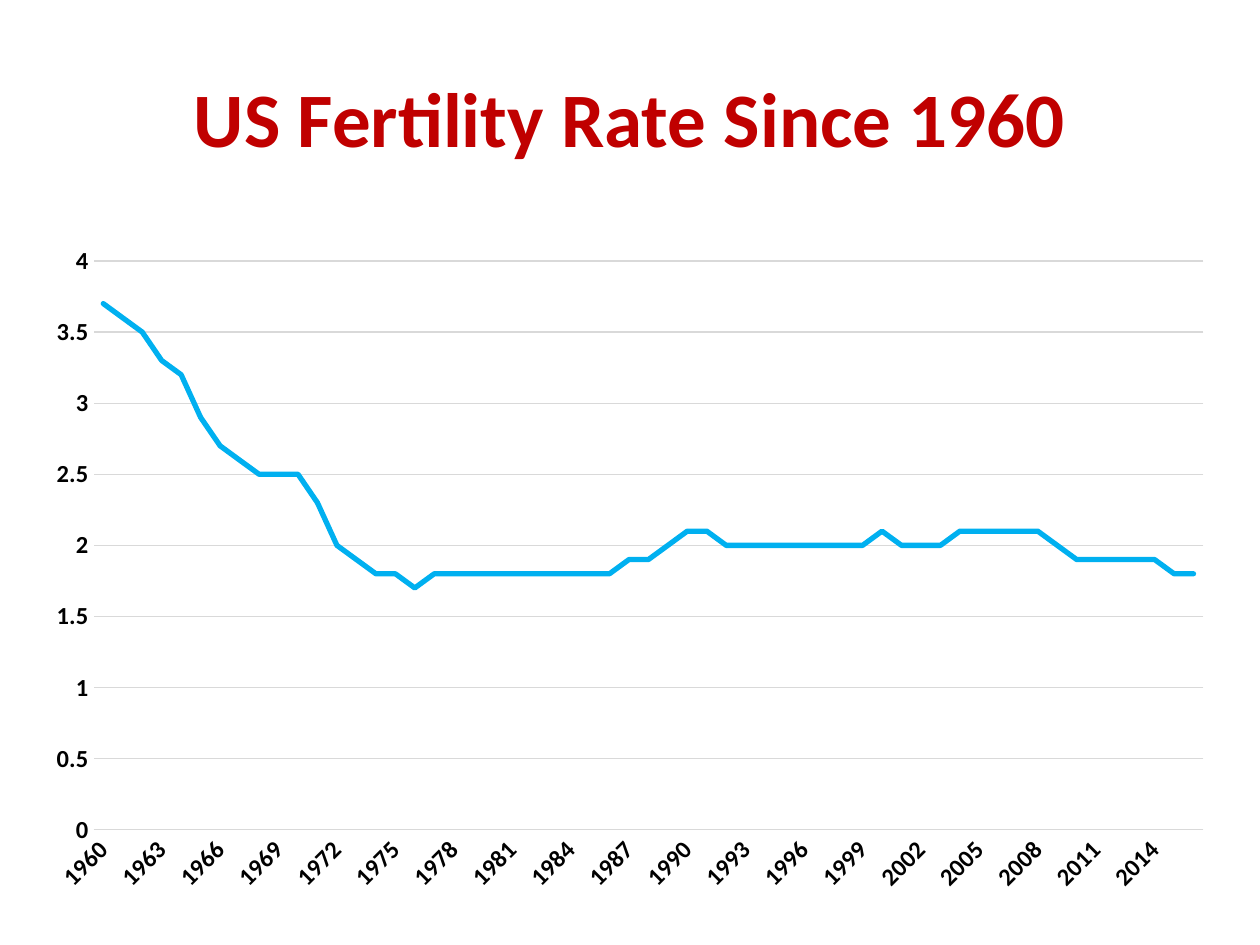
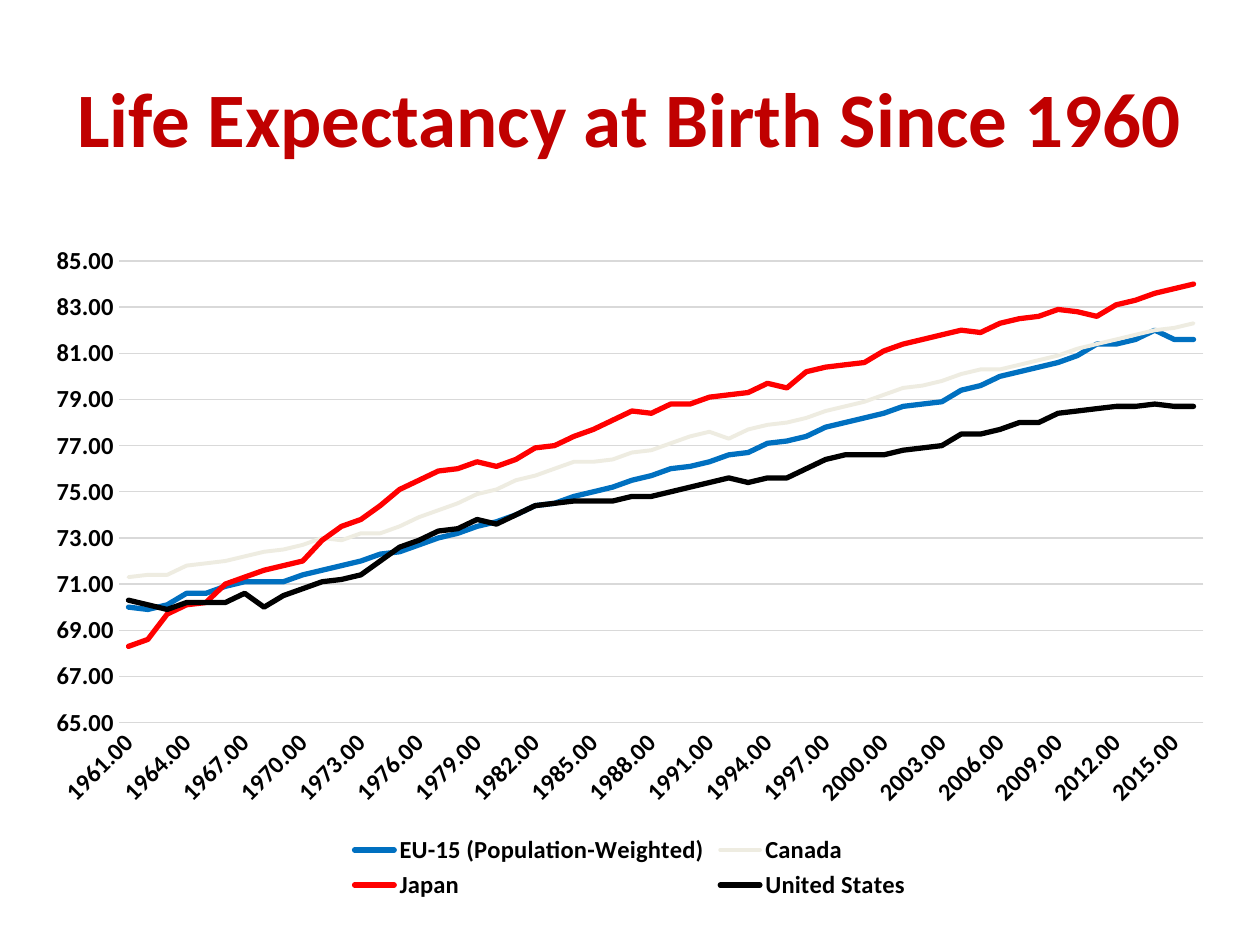
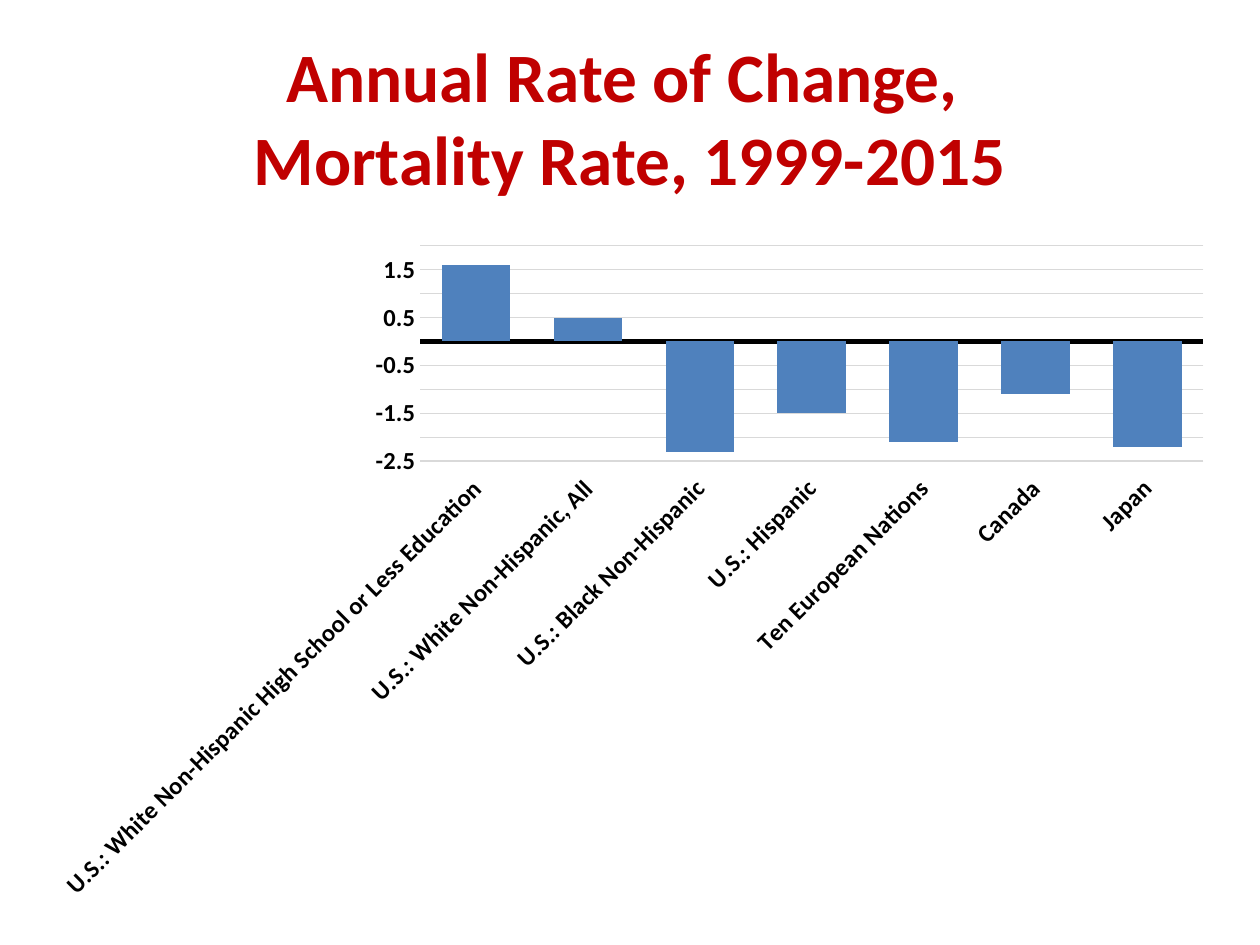
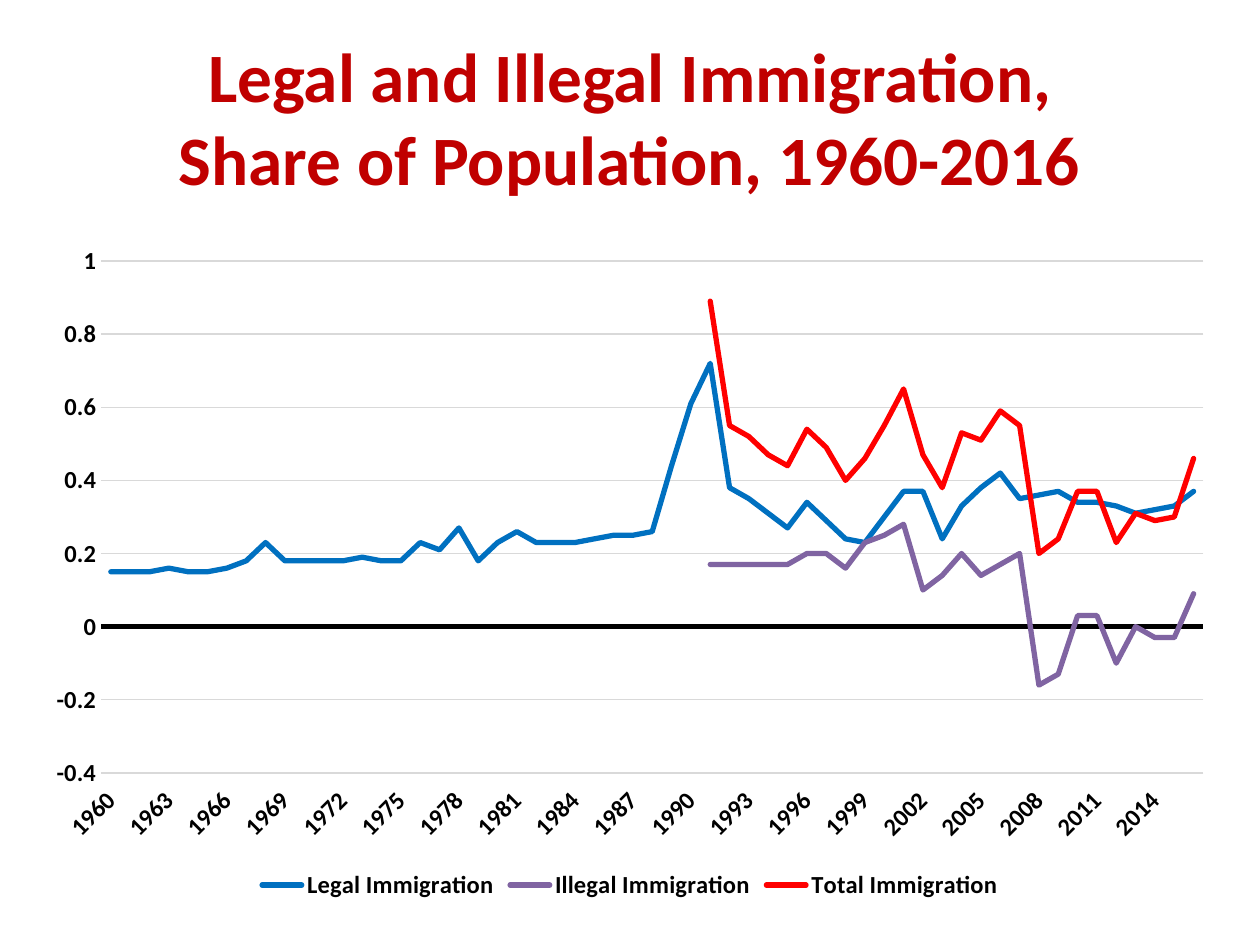
import dataclasses

import pptx
import pptx.chart.data
import pptx.dml.color
import pptx.enum.chart
import pptx.enum.text
import pptx.util

Inches = pptx.util.Inches
Pt = pptx.util.Pt


@dataclasses.dataclass(frozen=True)
class Theme:
    font: str = "Calibri"
    title_color: str = "C00000"
    text_color: str = "000000"
    grid_color: str = "D9D9D9"
    sky: str = "00B0F0"
    blue: str = "0070C0"
    ivory: str = "EEECE1"
    red: str = "FF0000"
    purple: str = "8064A2"
    bar: str = "4F81BD"
    title_size: float = 44
    two_line_title_size: float = 39.6
    label_size: float = 14
    line_chart_size: float = 10
    bar_chart_size: float = 18
    thin_line: float = 0.75
    light_line: float = 2.25
    thick_line: float = 3


THEME = Theme()
SLIDE_WIDTH = Inches(10)
SLIDE_HEIGHT = Inches(7.5)
TITLE_BOX = [Inches(value) for value in (0.5, 0.3, 9, 1.25)]
CHART_AREA_TOP = Inches(1.53)
CHART_WIDTH = Inches(9.48)
CHART_HEIGHT = Inches(5.34)
CHART_LEFT = (SLIDE_WIDTH - CHART_WIDTH) // 2
CHART_TOP = (CHART_AREA_TOP + SLIDE_HEIGHT - CHART_HEIGHT) // 2
CHART_BOX = [CHART_LEFT, CHART_TOP, CHART_WIDTH, CHART_HEIGHT]

FERTILITY_RATE = [
    3.7, 3.6, 3.5, 3.3, 3.2, 2.9, 2.7, 2.6, 2.5, 2.5,
    2.5, 2.3, 2, 1.9, 1.8, 1.8, 1.7, 1.8, 1.8, 1.8,
    1.8, 1.8, 1.8, 1.8, 1.8, 1.8, 1.8, 1.9, 1.9, 2,
    2.1, 2.1, 2, 2, 2, 2, 2, 2, 2, 2,
    2.1, 2, 2, 2, 2.1, 2.1, 2.1, 2.1, 2.1, 2,
    1.9, 1.9, 1.9, 1.9, 1.9, 1.8, 1.8,
]
LIFE_EXPECTANCY_EU = [
    70, 69.9, 70.1, 70.6, 70.6, 70.9, 71.1, 71.1, 71.1, 71.4,
    71.6, 71.8, 72, 72.3, 72.4, 72.7, 73, 73.2, 73.5, 73.7,
    74, 74.4, 74.5, 74.8, 75, 75.2, 75.5, 75.7, 76, 76.1,
    76.3, 76.6, 76.7, 77.1, 77.2, 77.4, 77.8, 78, 78.2, 78.4,
    78.7, 78.8, 78.9, 79.4, 79.6, 80, 80.2, 80.4, 80.6, 80.9,
    81.4, 81.4, 81.6, 82, 81.6, 81.6,
]
LIFE_EXPECTANCY_CANADA = [
    71.3, 71.4, 71.4, 71.8, 71.9, 72, 72.2, 72.4, 72.5, 72.7,
    73, 72.9, 73.2, 73.2, 73.5, 73.9, 74.2, 74.5, 74.9, 75.1,
    75.5, 75.7, 76, 76.3, 76.3, 76.4, 76.7, 76.8, 77.1, 77.4,
    77.6, 77.3, 77.7, 77.9, 78, 78.2, 78.5, 78.7, 78.9, 79.2,
    79.5, 79.6, 79.8, 80.1, 80.3, 80.3, 80.5, 80.7, 80.9, 81.2,
    81.4, 81.6, 81.8, 82, 82.1, 82.3,
]
LIFE_EXPECTANCY_JAPAN = [
    68.3, 68.6, 69.7, 70.1, 70.2, 71, 71.3, 71.6, 71.8, 72,
    72.9, 73.5, 73.8, 74.4, 75.1, 75.5, 75.9, 76, 76.3, 76.1,
    76.4, 76.9, 77, 77.4, 77.7, 78.1, 78.5, 78.4, 78.8, 78.8,
    79.1, 79.2, 79.3, 79.7, 79.5, 80.2, 80.4, 80.5, 80.6, 81.1,
    81.4, 81.6, 81.8, 82, 81.9, 82.3, 82.5, 82.6, 82.9, 82.8,
    82.6, 83.1, 83.3, 83.6, 83.8, 84,
]
LIFE_EXPECTANCY_US = [
    70.3, 70.1, 69.9, 70.2, 70.2, 70.2, 70.6, 70, 70.5, 70.8,
    71.1, 71.2, 71.4, 72, 72.6, 72.9, 73.3, 73.4, 73.8, 73.6,
    74, 74.4, 74.5, 74.6, 74.6, 74.6, 74.8, 74.8, 75, 75.2,
    75.4, 75.6, 75.4, 75.6, 75.6, 76, 76.4, 76.6, 76.6, 76.6,
    76.8, 76.9, 77, 77.5, 77.5, 77.7, 78, 78, 78.4, 78.5,
    78.6, 78.7, 78.7, 78.8, 78.7, 78.7,
]
MORTALITY_CHANGE = {
    " U.S.: White Non-Hispanic High School or Less Education": 1.6,
    " U.S.: White Non-Hispanic, All": 0.5,
    " U.S.: Black Non-Hispanic": -2.3,
    " U.S.: Hispanic": -1.5,
    "Ten European Nations": -2.1,
    "Canada": -1.1,
    "Japan": -2.2,
}
YEARS_BEFORE_ILLEGAL_DATA = [None] * (1991 - 1960)
LEGAL_IMMIGRATION = [
    0.15, 0.15, 0.15, 0.16, 0.15, 0.15, 0.16, 0.18, 0.23, 0.18,
    0.18, 0.18, 0.18, 0.19, 0.18, 0.18, 0.23, 0.21, 0.27, 0.18,
    0.23, 0.26, 0.23, 0.23, 0.23, 0.24, 0.25, 0.25, 0.26, 0.44,
    0.61, 0.72, 0.38, 0.35, 0.31, 0.27, 0.34, 0.29, 0.24, 0.23,
    0.3, 0.37, 0.37, 0.24, 0.33, 0.38, 0.42, 0.35, 0.36, 0.37,
    0.34, 0.34, 0.33, 0.31, 0.32, 0.33, 0.37,
]
ILLEGAL_IMMIGRATION = YEARS_BEFORE_ILLEGAL_DATA + [
    0.17, 0.17, 0.17, 0.17, 0.17, 0.2, 0.2, 0.16, 0.23,
    0.25, 0.28, 0.1, 0.14, 0.2, 0.14, 0.17, 0.2, -0.16, -0.13,
    0.03, 0.03, -0.1, 0, -0.03, -0.03, 0.09,
]
TOTAL_IMMIGRATION = YEARS_BEFORE_ILLEGAL_DATA + [
    0.89, 0.55, 0.52, 0.47, 0.44, 0.54, 0.49, 0.4, 0.46,
    0.55, 0.65, 0.47, 0.38, 0.53, 0.51, 0.59, 0.55, 0.2, 0.24,
    0.37, 0.37, 0.23, 0.31, 0.29, 0.3, 0.46,
]


def rgb(color):
    return pptx.dml.color.RGBColor.from_string(color)


def format_font(font, size, color=THEME.text_color, bold=True):
    font.name = THEME.font
    font.size = Pt(size)
    font.bold = bold
    font.color.rgb = rgb(color)


def format_line(line, color, width):
    line.color.rgb = rgb(color)
    line.width = Pt(width)


def add_titled_slide(presentation, title, size):
    slide = presentation.slides.add_slide(presentation.slide_layouts[5])
    shape = slide.shapes.title
    shape.left, shape.top, shape.width, shape.height = TITLE_BOX
    text_frame = shape.text_frame
    text_frame.text = title
    text_frame.vertical_anchor = pptx.enum.text.MSO_ANCHOR.MIDDLE
    paragraph = text_frame.paragraphs[0]
    paragraph.alignment = pptx.enum.text.PP_ALIGN.CENTER
    for run in paragraph.runs:
        format_font(run.font, size, THEME.title_color)
    return slide


def format_axes(chart, zero_line):
    for axis in (chart.category_axis, chart.value_axis):
        axis.major_tick_mark = pptx.enum.chart.XL_TICK_MARK.NONE
        axis.minor_tick_mark = pptx.enum.chart.XL_TICK_MARK.NONE
        format_font(axis.tick_labels.font, THEME.label_size)
    for body in chart._chartSpace.xpath(".//c:catAx/c:txPr/a:bodyPr"):
        body.set("rot", "-60000000")
        body.set("vert", "horz")
    category_line = chart.category_axis.format.line
    if zero_line:
        chart.category_axis.tick_label_position = pptx.enum.chart.XL_TICK_LABEL_POSITION.LOW
        format_line(category_line, THEME.text_color, THEME.thick_line)
    else:
        format_line(category_line, THEME.grid_color, THEME.thin_line)
    chart.value_axis.format.line.fill.background()
    chart.value_axis.has_major_gridlines = True
    gridlines = chart.value_axis.major_gridlines
    format_line(gridlines.format.line, THEME.grid_color, THEME.thin_line)


def add_chart(slide, chart_type, chart_data, size, bold, zero_line):
    chart = slide.shapes.add_chart(chart_type, *CHART_BOX, chart_data).chart
    chart.has_title = False
    chart.has_legend = False
    format_font(chart.font, size, bold=bold)
    chart.plots[0].vary_by_categories = False
    format_axes(chart, zero_line)
    return chart


def add_line_chart(slide, first_year, lines, year_format="General", zero_line=False):
    chart_data = pptx.chart.data.CategoryChartData()
    chart_data.categories = range(first_year, 2017)
    chart_data.categories.number_format = year_format
    for name, values, color, width in lines:
        chart_data.add_series(name, values)
    chart = add_chart(slide, pptx.enum.chart.XL_CHART_TYPE.LINE, chart_data,
                      THEME.line_chart_size, False, zero_line)
    for series, (name, values, color, width) in zip(chart.plots[0].series, lines):
        series.smooth = False
        format_line(series.format.line, color, width)
    for line in chart._chartSpace.xpath(".//c:ser/c:spPr/a:ln"):
        line.set("cap", "rnd")
    return chart


def add_column_chart(slide, values_by_category):
    chart_data = pptx.chart.data.CategoryChartData()
    chart_data.categories = list(values_by_category)
    chart_data.add_series("Series 1", list(values_by_category.values()))
    chart = add_chart(slide, pptx.enum.chart.XL_CHART_TYPE.COLUMN_CLUSTERED, chart_data,
                      THEME.bar_chart_size, True, True)
    plot = chart.plots[0]
    plot.gap_width = 63
    plot.overlap = -27
    series = plot.series[0]
    series.invert_if_negative = False
    series.format.fill.solid()
    series.format.fill.fore_color.rgb = rgb(THEME.bar)
    return chart


def add_bottom_legend(chart):
    chart.has_legend = True
    chart.legend.position = pptx.enum.chart.XL_LEGEND_POSITION.BOTTOM
    chart.legend.include_in_layout = False
    format_font(chart.legend.font, THEME.label_size)


def add_fertility_slide(presentation):
    slide = add_titled_slide(presentation, "US Fertility Rate Since 1960", THEME.title_size)
    add_line_chart(slide, 1960, [("Series 1", FERTILITY_RATE, THEME.sky, THEME.thick_line)])


def add_life_expectancy_slide(presentation):
    slide = add_titled_slide(presentation, "Life Expectancy at Birth Since 1960",
                             THEME.title_size)
    chart = add_line_chart(slide, 1961, [
        ("EU-15 (Population-Weighted)", LIFE_EXPECTANCY_EU, THEME.blue, THEME.thick_line),
        ("Canada", LIFE_EXPECTANCY_CANADA, THEME.ivory, THEME.light_line),
        ("Japan", LIFE_EXPECTANCY_JAPAN, THEME.red, THEME.thick_line),
        ("United States", LIFE_EXPECTANCY_US, THEME.text_color, THEME.thick_line),
    ], year_format="0.00")
    chart.category_axis.tick_labels.number_format = "0"
    chart.category_axis.tick_labels.number_format_is_linked = True
    axis = chart.value_axis
    axis.minimum_scale = 65
    axis.maximum_scale = 85
    axis.major_unit = 2
    axis.tick_labels.number_format = "0.00"
    axis.tick_labels.number_format_is_linked = False
    add_bottom_legend(chart)


def add_mortality_slide(presentation):
    slide = add_titled_slide(presentation,
                             "Annual Rate of Change, \vMortality Rate, 1999-2015",
                             THEME.two_line_title_size)
    add_column_chart(slide, MORTALITY_CHANGE)


def add_immigration_slide(presentation):
    slide = add_titled_slide(presentation,
                             "Legal and Illegal Immigration,\vShare of Population, 1960-2016",
                             THEME.two_line_title_size)
    chart = add_line_chart(slide, 1960, [
        ("Legal Immigration", LEGAL_IMMIGRATION, THEME.blue, THEME.thick_line),
        ("Illegal Immigration", ILLEGAL_IMMIGRATION, THEME.purple, THEME.thick_line),
        ("Total Immigration", TOTAL_IMMIGRATION, THEME.red, THEME.thick_line),
    ], zero_line=True)
    add_bottom_legend(chart)


def main():
    presentation = pptx.Presentation()
    presentation.slide_width = SLIDE_WIDTH
    presentation.slide_height = SLIDE_HEIGHT
    add_fertility_slide(presentation)
    add_life_expectancy_slide(presentation)
    add_mortality_slide(presentation)
    add_immigration_slide(presentation)
    presentation.save("out.pptx")


if __name__ == "__main__":
    main()
